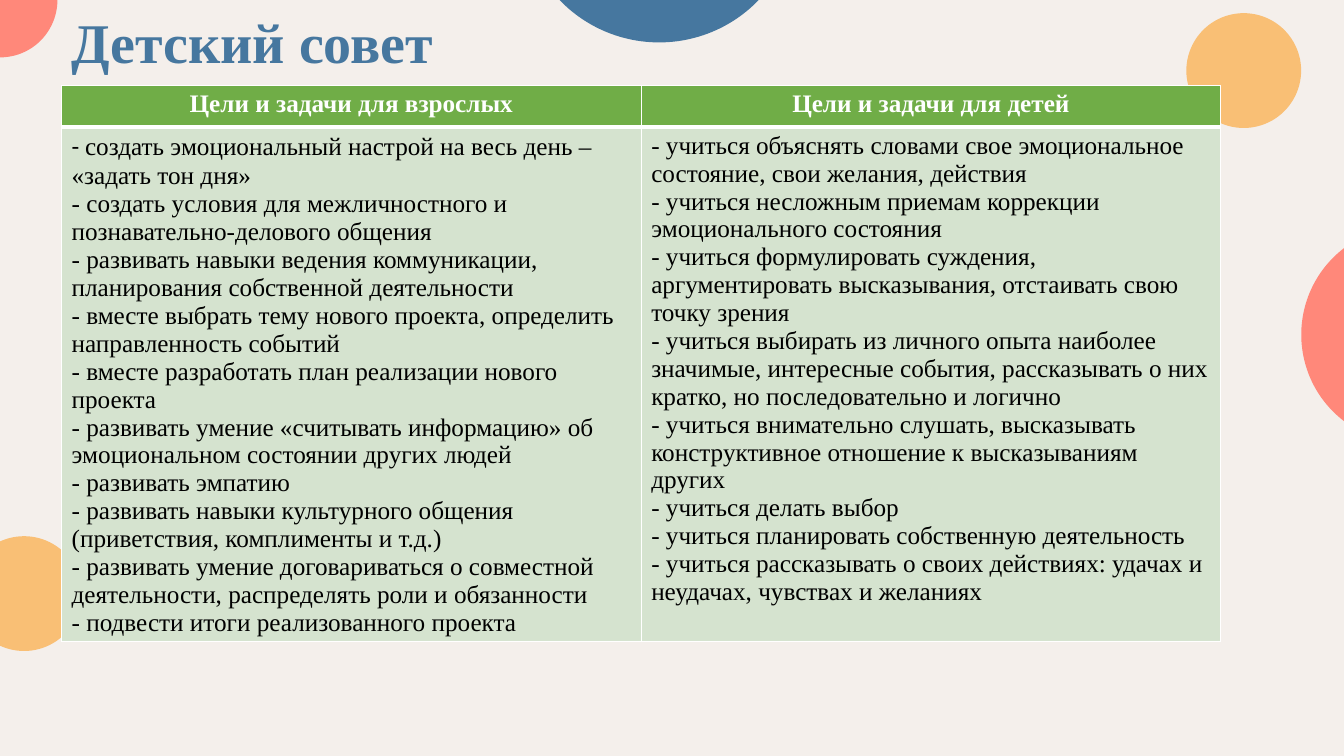
from dataclasses import dataclass

from lxml import etree
from pptx import Presentation
from pptx.dml.color import RGBColor
from pptx.enum.shapes import MSO_SHAPE
from pptx.enum.text import MSO_ANCHOR, PP_ALIGN
from pptx.oxml.ns import qn
from pptx.util import Pt

OVAL = MSO_SHAPE.OVAL
MIDDLE = MSO_ANCHOR.MIDDLE
LEFT, CENTER = PP_ALIGN.LEFT, PP_ALIGN.CENTER
TITLE_ONLY = 5


@dataclass(frozen=True)
class Theme:
    background: str = "F4EFEB"
    coral: str = "FF887A"
    amber: str = "F9BF75"
    blue: str = "46779F"
    header: str = "70AD47"
    body: str = "D5E3CF"
    white: str = "FFFFFF"
    black: str = "000000"
    font: str = "Times New Roman"
    dash_font: str = "Calibri"
    title_size: int = 40
    table_size: int = 18


THEME = Theme()

# Left, top and diameter in points, then colour
CIRCLES = [
    (-41, -41, 82, THEME.coral),
    (929.5, 161.3, 155.5, THEME.coral),
    (-23.8, 383, 82, THEME.amber),
    (847.4, 9.4, 82, THEME.amber),
    (372.2, -167, 197.3, THEME.blue),
]

GOALS = {
    "Цели и задачи для взрослых": [
        "создать эмоциональный настрой на весь день – «задать тон дня»",
        "создать условия для межличностного и познавательно-делового общения",
        "развивать навыки ведения коммуникации, планирования собственной деятельности",
        "вместе выбрать тему нового проекта, определить направленность событий",
        "вместе разработать план реализации нового проекта",
        "развивать умение «считывать информацию» об эмоциональном состоянии других людей",
        "развивать эмпатию",
        "развивать навыки культурного общения (приветствия, комплименты и т.д.)",
        "развивать умение договариваться о совместной деятельности, "
        "распределять роли и обязанности",
        "подвести итоги реализованного проекта",
    ],
    "Цели и задачи для детей": [
        "учиться объяснять словами свое эмоциональное состояние, свои желания, действия",
        "учиться несложным приемам коррекции эмоционального состояния",
        "учиться формулировать суждения, аргументировать высказывания, "
        "отстаивать свою точку зрения",
        "учиться выбирать из личного опыта наиболее значимые, интересные события, "
        "рассказывать о них кратко, но последовательно и логично",
        "учиться внимательно слушать, высказывать конструктивное отношение "
        "к высказываниям других",
        "учиться делать выбор",
        "учиться планировать собственную деятельность",
        "учиться рассказывать о своих действиях: удачах и неудачах, чувствах и желаниях",
    ],
}


def set_fill(fill, color):
    fill.solid()
    fill.fore_color.rgb = RGBColor.from_string(color)


def add_run(paragraph, text, *, size, color, font=THEME.font, bold=False):
    run = paragraph.add_run()
    run.text = text
    run.font.name = font
    run.font.size = Pt(size)
    run.font.bold = bold
    run.font.color.rgb = RGBColor.from_string(color)


def write_text(frame, lines, *, align=LEFT, spacing=None, **run_format):
    for index, line in enumerate(lines):
        paragraph = frame.paragraphs[0] if index == 0 else frame.add_paragraph()
        paragraph.alignment = align
        paragraph.line_spacing = spacing
        add_run(paragraph, line, **run_format)


def add_circle(slide, left, top, diameter, color):
    circle = slide.shapes.add_shape(OVAL, Pt(left), Pt(top), Pt(diameter), Pt(diameter))
    circle.shadow.inherit = False
    set_fill(circle.fill, color)
    circle.line.fill.background()


def add_title(slide, text):
    title = slide.shapes.title
    title.left, title.top, title.width, title.height = Pt(44), Pt(-20), Pt(828), Pt(104.4)
    title.text_frame.vertical_anchor = MIDDLE
    write_text(title.text_frame, [text], spacing=0.9, size=THEME.title_size,
               color=THEME.blue, bold=True)
    # Bring the title in front of the circles
    slide.shapes.element.append(title.element)


def style_cell(cell, color, borders):
    """Fill a cell and draw its borders, given as side and width in schema order."""
    set_fill(cell.fill, color)
    properties = cell._tc.get_or_add_tcPr()
    for index, (side, width) in enumerate(borders.items()):
        line = etree.Element(qn(f"a:ln{side}"), w=str(Pt(width)))
        solid = etree.SubElement(line, qn("a:solidFill"))
        etree.SubElement(solid, qn("a:srgbClr"), val=THEME.white)
        properties.insert(index, line)


def add_goals_table(slide, goals):
    frame = slide.shapes.add_table(2, len(goals), Pt(44), Pt(61), Pt(828), Pt(396.5))
    table = frame.table
    table.rows[0].height, table.rows[1].height = Pt(29.5), Pt(367)
    for column, (heading, items) in enumerate(goals.items()):
        header, body = table.cell(0, column), table.cell(1, column)
        style_cell(header, THEME.header, {"L": 1, "R": 1, "T": 1, "B": 3})
        style_cell(body, THEME.body, {"L": 1, "R": 1, "B": 1})
        write_text(header.text_frame, [heading], align=CENTER, size=THEME.table_size,
                   color=THEME.white, bold=True)
        write_text(body.text_frame, [f"- {item}" for item in items],
                   size=THEME.table_size, color=THEME.black)
    # The very first dash has its own font
    opening = table.cell(1, 0).text_frame.paragraphs[0]
    first_run = opening.runs[0]
    item = first_run.text.removeprefix("- ")
    first_run.text = "- "
    first_run.font.name = THEME.dash_font
    add_run(opening, item, size=THEME.table_size, color=THEME.black)


def main():
    presentation = Presentation()
    presentation.slide_width, presentation.slide_height = Pt(960), Pt(540)
    slide = presentation.slides.add_slide(presentation.slide_layouts[TITLE_ONLY])
    set_fill(slide.background.fill, THEME.background)

    # Decoration, then content
    for circle in CIRCLES:
        add_circle(slide, *circle)
    add_title(slide, "Детский совет")
    add_goals_table(slide, GOALS)

    presentation.save("out.pptx")


if __name__ == "__main__":
    main()
